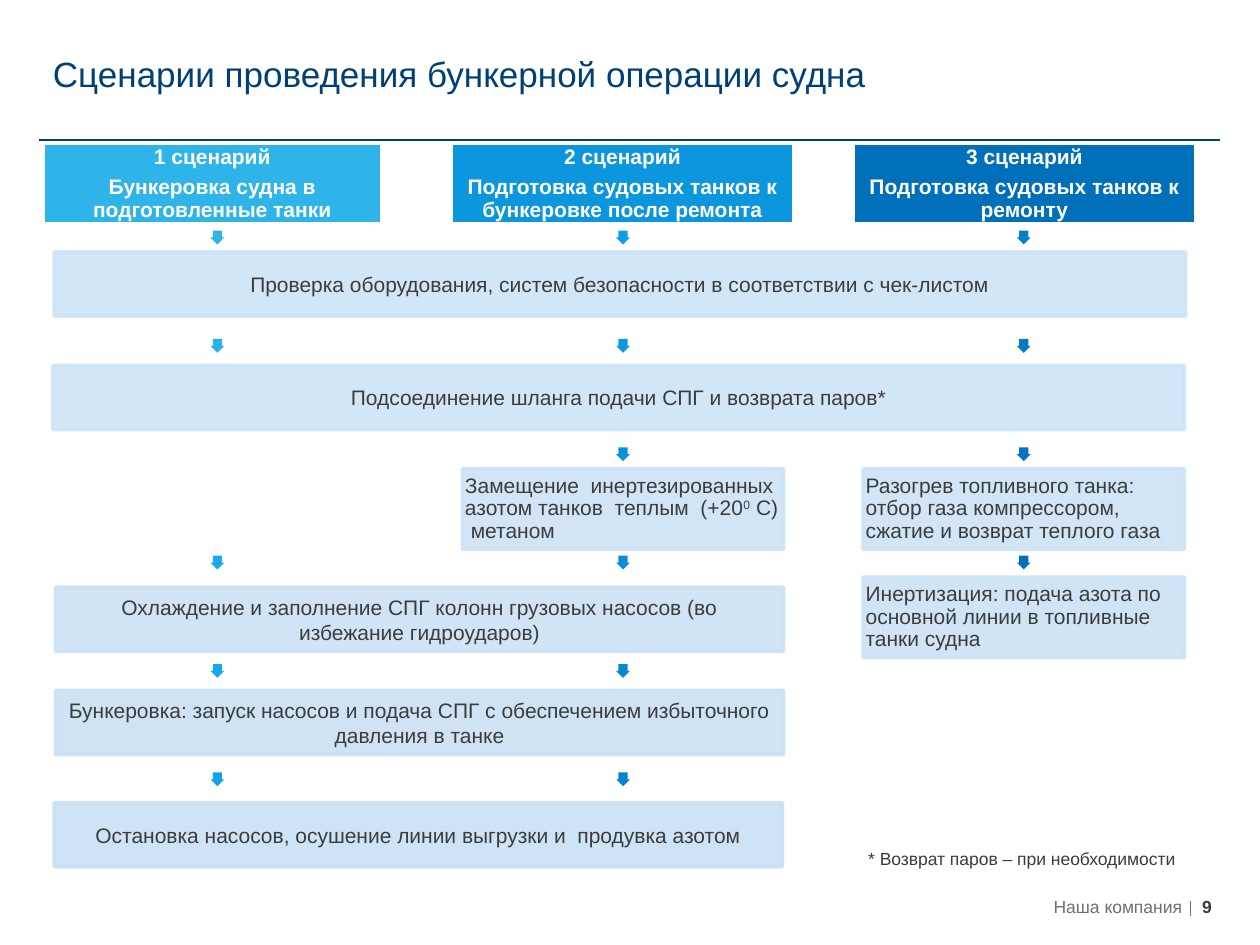
from lxml.etree import SubElement
from pptx import Presentation
from pptx.dml.color import RGBColor
from pptx.enum.shapes import MSO_CONNECTOR, MSO_SHAPE
from pptx.enum.text import MSO_ANCHOR, PP_ALIGN
from pptx.oxml.ns import qn
from pptx.util import Inches, Pt

COLORS = {
    "title": "004077", "text": "3C3C3C", "muted": "706F6F", "white": "FFFFFF",
    "scenario 1": "2FB4E9", "scenario 2": "0B96DE", "scenario 3": "0070BA",
    "check": "CDE5F7", "hose": "CDE4F6", "warming": "CCE3F7",
    "cooling": "CBE2F6", "bunkering": "CAE1F5", "stop": "C9E0F4",
}

SCENARIOS = [
    (0.34, 2.69, "scenario 1", "1 сценарий\nБункеровка судна в подготовленные танки"),
    (3.58, 2.72, "scenario 2", "2 сценарий\nПодготовка судовых танков к бункеровке после ремонта"),
    (6.77, 2.72, "scenario 3", "3 сценарий\nПодготовка судовых танков к ремонту"),
]

# A pair of ^ marks encloses superscript text
CARDS = [
    (3.67, 3.72, "warming", "Замещение  инертезированных азотом танков  теплым  (+20^0^ С)  метаном"),
    (6.85, 3.72, "warming", "Разогрев топливного танка: отбор газа компрессором, сжатие и возврат теплого газа"),
    (6.85, 4.58, "cooling", "Инертизация: подача азота по основной линии в топливные танки судна"),
]

STEPS = [
    (0.43, 2.00, 8.98, "check", "Проверка оборудования, систем безопасности в соответствии с чек-листом"),
    (0.42, 2.90, 8.98, "hose", "Подсоединение шланга подачи СПГ и возврата паров*"),
    (0.44, 4.66, 5.78, "cooling", "Охлаждение и заполнение СПГ колонн грузовых насосов (во избежание гидроударов)"),
    (0.44, 5.48, 5.78, "bunkering", "Бункеровка: запуск насосов и подача СПГ с обеспечением избыточного давления в танке"),
    (0.43, 6.37, 5.78, "stop", "Остановка насосов, осушение линии выгрузки и  продувка азотом"),
]

# Left edge of each column of arrows, then the colour in each row it occupies
ARROWS = [
    (1.67, {0: "2FB4E9", 1: "28B1EA", 3: "19ABEC", 4: "12A8ED", 5: "10A3E9"}),
    (4.89, {0: "0E9EE4", 1: "0C98E0", 2: "0A93DC", 3: "098ED7", 4: "0789D2", 5: "0584CE"}),
    (8.07, {0: "047FC9", 1: "037AC4", 2: "0175BF", 3: "0070BA"}),
]
ARROW_TOP, ARROW_STEP, ARROW_SIZE = 1.83, 0.86, 0.11


def rgb(name):
    return RGBColor.from_string(COLORS[name])


def write(frame, text, size, color, align=PP_ALIGN.LEFT, bold=False,
          before=0, after=0, spacing=1.0):
    frame.word_wrap = True
    frame.text = text.split("^")[0]
    for part in text.split("^")[1:]:
        frame.paragraphs[-1].add_run().text = part
    for para in frame.paragraphs:
        para.alignment = align
        para.space_before, para.space_after = Pt(before), Pt(after)
        para.line_spacing = spacing
        for index, span in enumerate(para.runs):
            span.font.name = "Arial"
            span.font.size = Pt(size)
            span.font.bold = bold
            span.font.color.rgb = rgb(color)
            if index % 2:
                para.runs[index].font.bold = bold
                list(frame._txBody.iter(qn("a:rPr")))[index].set("baseline", "30000")


def set_margins(frame, left, top, right, bottom):
    frame.margin_left, frame.margin_top = Inches(left), Inches(top)
    frame.margin_right, frame.margin_bottom = Inches(right), Inches(bottom)


def add_block(page, left, top, width, height, fill, line, opacity=100):
    box = page.shapes.add_shape(MSO_SHAPE.RECTANGLE, Inches(left), Inches(top),
                                Inches(width), Inches(height))
    box.shadow.inherit = False
    box.fill.solid()
    box.fill.fore_color.rgb = rgb(fill)
    box.line.color.rgb = rgb(line)
    box.line.width = Pt(2)
    if opacity < 100:
        for color in box.element.spPr.iter(qn("a:srgbClr")):
            SubElement(color, qn("a:alpha"), val=str(opacity * 1000))
    box.text_frame.vertical_anchor = MSO_ANCHOR.MIDDLE
    return box


def add_scenario(page, left, width, color, text):
    frame = add_block(page, left, 1.14, width, 0.64, color, "white").text_frame
    set_margins(frame, 0.02, 0.02, 0.02, 0.02)
    write(frame, text, 12, "white", PP_ALIGN.CENTER, bold=True, after=4.2, spacing=0.9)


def add_card(page, left, top, color, text):
    frame = add_block(page, left, top, 2.55, 0.64, color, color, 90).text_frame
    set_margins(frame, 0.02, 0.02, 0.02, 0.02)
    write(frame, text, 12, "text", after=4.2, spacing=0.9)


def add_step(page, left, top, width, color, text):
    frame = add_block(page, left, top, width, 0.51, color, color, 90).text_frame
    write(frame, text, 12, "text", PP_ALIGN.CENTER, before=6)


def add_arrow(page, left, row, color):
    arrow = page.shapes.add_shape(
        MSO_SHAPE.RIGHT_ARROW, Inches(left), Inches(ARROW_TOP + row * ARROW_STEP),
        Inches(ARROW_SIZE), Inches(ARROW_SIZE))
    arrow.rotation = 90
    arrow.adjustments[0] = 0.67
    arrow.shadow.inherit = False
    arrow.fill.solid()
    arrow.fill.fore_color.rgb = RGBColor.from_string(color)
    arrow.line.fill.background()


def add_rule(page, start, end, color, width):
    rule = page.shapes.add_connector(MSO_CONNECTOR.STRAIGHT,
                                     *map(Inches, start), *map(Inches, end))
    rule.line.color.rgb = rgb(color)
    rule.line.width = Pt(width)
    SubElement(rule.element.spPr, qn("a:effectLst"))


def add_label(page, left, top, width, height, text, color, margin_top=0, **style):
    box = page.shapes.add_textbox(Inches(left), Inches(top), Inches(width), Inches(height))
    set_margins(box.text_frame, 0, margin_top, 0, 0)
    write(box.text_frame, text, 10, color, **style)


def add_title(page, text):
    title = page.shapes.title
    title.left, title.top = Inches(0.32), Inches(0.25)
    title.width, title.height = Inches(9.41), Inches(0.67)
    title.text_frame.vertical_anchor = MSO_ANCHOR.MIDDLE
    write(title.text_frame, text, 20, "title")


def main():
    deck = Presentation()
    deck.slide_width, deck.slide_height = Inches(10), Inches(7.5)
    page = deck.slides.add_slide(deck.slide_layouts[5])

    add_title(page, "Сценарии проведения бункерной операции судна")
    add_rule(page, (0.31, 1.11), (9.68, 1.11), "title", 1)
    for scenario in SCENARIOS:
        add_scenario(page, *scenario)
    for left, row_colors in ARROWS:
        for row, color in row_colors.items():
            add_arrow(page, left, row, color)
    for card in CARDS:
        add_card(page, *card)
    for step in STEPS:
        add_step(page, *step)

    add_label(page, 6.89, 6.68, 2.49, 0.22, "* Возврат паров – при необходимости",
              "text", margin_top=0.05, before=6)
    add_label(page, 5.94, 7.11, 3.44, 0.18, "Наша компания", "muted", align=PP_ALIGN.RIGHT)
    add_rule(page, (9.45, 7.15), (9.45, 7.27), "muted", 0.75)
    add_label(page, 9.54, 7.11, 0.24, 0.18, "9", "text", bold=True)
    deck.save("out.pptx")


if __name__ == "__main__":
    main()
